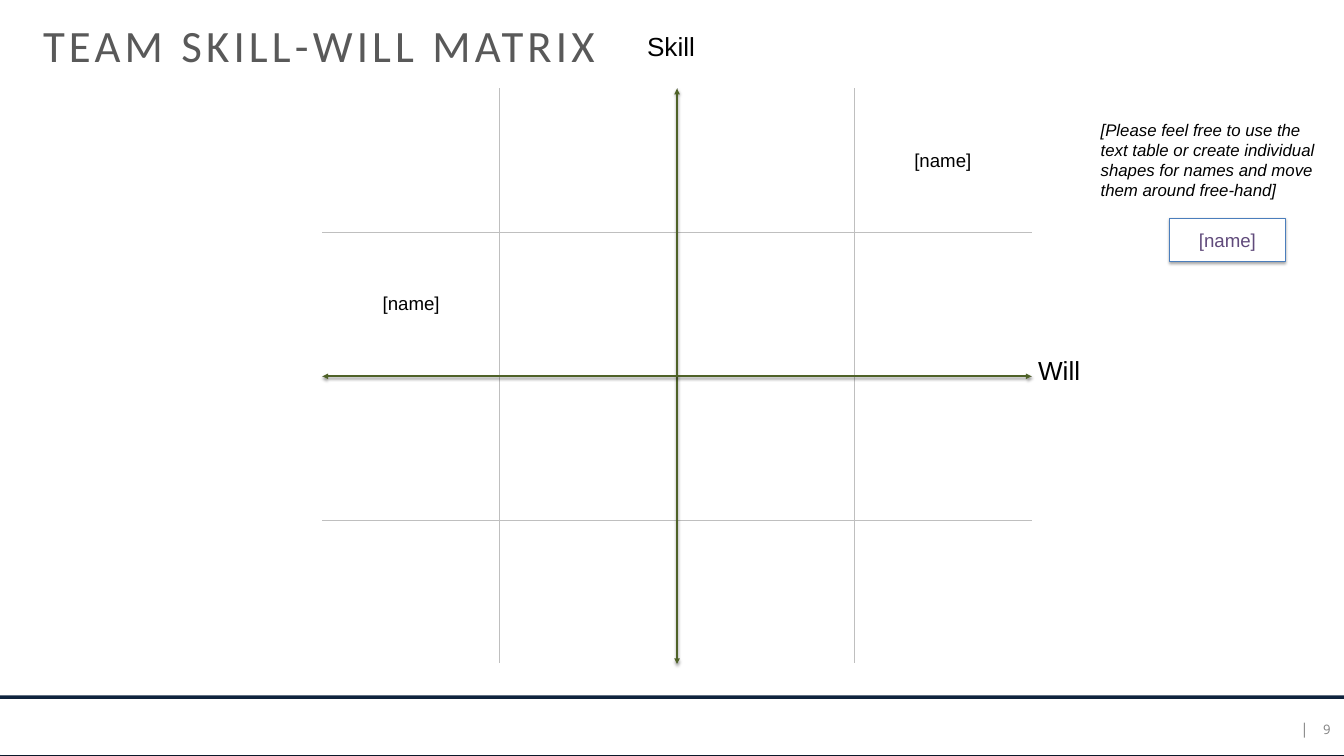
from pptx import Presentation
from pptx.dml.color import RGBColor
from pptx.enum.shapes import MSO_CONNECTOR, MSO_SHAPE
from pptx.enum.text import MSO_ANCHOR, MSO_AUTO_SIZE, PP_ALIGN
from pptx.oxml import parse_xml
from pptx.oxml.ns import nsdecls, qn
from pptx.util import Pt

WIDTH, HEIGHT = 1440, 810
NAVY = RGBColor(0x0F, 0x24, 0x3E)
WHITE = RGBColor(0xFF, 0xFF, 0xFF)
BLACK = RGBColor(0, 0, 0)
GRID = RGBColor(0xBF, 0xBF, 0xBF)
GREEN = RGBColor(0x4F, 0x62, 0x28)
BLUE = RGBColor(0x4B, 0x7E, 0xBC)
PURPLE = RGBColor(0x60, 0x4A, 0x7B)
GREY = RGBColor(0x80, 0x80, 0x80)
TITLE_GREY = RGBColor(0x59, 0x59, 0x59)

GRID_BOX = (345.6, 95.04, 759.6, 616.32)
NAMES = [["", "", "", "[name]"],
         ["[name]", "", "", ""],
         [""] * 4,
         [""] * 4]


def points(box):
    return [Pt(v) for v in box]


def add_shadow(shape, alpha=35, dist=1.8):
    shape._element.spPr.append(parse_xml(
        f'<a:effectLst {nsdecls("a")}><a:outerShdw blurRad="{Pt(3.1)}" dist="{Pt(dist)}" '
        f'dir="5400000" rotWithShape="0"><a:srgbClr val="000000">'
        f'<a:alpha val="{alpha * 1000}"/></a:srgbClr></a:outerShdw></a:effectLst>'))


def write(tf, text, size, color=BLACK, align=PP_ALIGN.LEFT, name="Arial", **extra):
    p = tf.paragraphs[0]
    p.alignment = align
    r = p.add_run()
    r.text = text
    for key, value in {"name": name, "size": Pt(size), **extra}.items():
        setattr(r.font, key, value)
    r.font.color.rgb = color
    return r


def set_margins(target, x, y):
    for side, value in {"left": x, "right": x, "top": y, "bottom": y}.items():
        setattr(target, f"margin_{side}", Pt(value))


def add_label(s, box, text, size, inset=(7.2, 3.6), wrap=True, **style):
    tf = s.shapes.add_textbox(*points(box)).text_frame
    tf.word_wrap = wrap
    set_margins(tf, *inset)
    write(tf, text, size, **style)


def add_rect(s, box, fill, line=None, shadow=True):
    sp = s.shapes.add_shape(MSO_SHAPE.RECTANGLE, *points(box))
    sp.fill.solid()
    sp.fill.fore_color.rgb = fill
    if line is None:
        sp.line.fill.background()
    else:
        sp.line.color.rgb = line
        sp.line.width = Pt(0.75)
    if shadow:
        add_shadow(sp)
    else:
        sp.shadow.inherit = False
    return sp


def add_frame(s):
    # Navy base shows as a rule between the page and the footer
    add_rect(s, (0, 0, WIDTH, HEIGHT), NAVY)
    add_rect(s, (0, 749.5, WIDTH, 59), WHITE, WHITE)
    for box, text, size in [((1407.6, 773.3, 18, 17.3), "9", 14),
                            ((1393.2, 771.1, 8.6, 19.4), "|", 16)]:
        add_label(s, box, text, size, inset=(0, 0), wrap=False, color=GREY,
                  align=PP_ALIGN.RIGHT, name="Open Sans")
    add_rect(s, (0, 0, WIDTH, 745.2), WHITE, shadow=False)


def add_title(s, box, text):
    title = s.shapes.title
    title.left, title.top, title.width, title.height = points(box)
    tf = title.text_frame
    tf.auto_size = MSO_AUTO_SIZE.NONE
    tf.vertical_anchor = MSO_ANCHOR.TOP
    set_margins(tf, 7.2, 3.6)
    r = write(tf, text, 48, TITLE_GREY, name="Calibri")
    r.font._element.set("spc", "450")
    s.shapes._spTree.append(title._element)  # in front of the page


def set_borders(cell, row, col, last):
    outer = {"L": col == 0, "R": col == last, "T": row == 0, "B": row == last}
    tcPr = cell._tc.get_or_add_tcPr()
    for i, (side, is_outer) in enumerate(outer.items()):
        tcPr.insert(i, parse_xml(
            f'<a:ln{side} {nsdecls("a")} w="{Pt(1)}"><a:solidFill><a:srgbClr '
            f'val="{WHITE if is_outer else GRID}"/></a:solidFill></a:ln{side}>'))


def add_grid(s, box, names):
    n = len(names)
    table = s.shapes.add_table(n, n, *points(box)).table
    table.first_row = table.horz_banding = False
    for i, row in enumerate(names):
        for j, name in enumerate(row):
            cell = table.cell(i, j)
            cell.fill.background()
            set_borders(cell, i, j, n - 1)
            set_margins(cell, 14.4, 7.2)
            cell.vertical_anchor = MSO_ANCHOR.MIDDLE
            if name:
                write(cell.text_frame, name, 20, align=PP_ALIGN.CENTER)


def add_axes(s, box):
    x, y, w, h = box
    for ends in [(x + w / 2, y, x + w / 2, y + h),
                 (x + w, y + h / 2, x, y + h / 2)]:
        axis = s.shapes.add_connector(MSO_CONNECTOR.STRAIGHT, *points(ends))
        axis.line.color.rgb = GREEN
        axis.line.width = Pt(2)
        ln = axis._element.spPr.find(qn("a:ln"))
        for end in ("headEnd", "tailEnd"):
            ln.append(parse_xml(f'<a:{end} {nsdecls("a")} type="triangle"/>'))
        add_shadow(axis, 38, 1.6)
    add_label(s, (686.2, 29.5, 113, 41), "Skill", 28)
    add_label(s, (x + w, 375.8, 113, 41), "Will", 28)


def add_hint(s, box):
    x, y, w, h = box
    add_label(s, box, "[Please feel free to use the text table or create individual "
              "shapes for names and move them around free-hand]", 18, italic=True)
    tag = add_rect(s, (x + 80.6, y + 109.4, 124.6, 46.1), WHITE, BLUE)
    tag.text_frame.vertical_anchor = MSO_ANCHOR.MIDDLE
    write(tag.text_frame, "[name]", 20, PURPLE, PP_ALIGN.CENTER)


def main():
    prs = Presentation()
    prs.slide_width, prs.slide_height = Pt(WIDTH), Pt(HEIGHT)
    s = prs.slides.add_slide(prs.slide_layouts[5])
    add_frame(s)
    add_grid(s, GRID_BOX, NAMES)
    add_title(s, (38.9, 15.1, 681, 65.5), "TEAM SKILL-WILL MATRIX")
    add_axes(s, GRID_BOX)
    add_hint(s, (1172.2, 124.6, 254.2, 94.3))
    prs.save("out.pptx")


if __name__ == "__main__":
    main()
